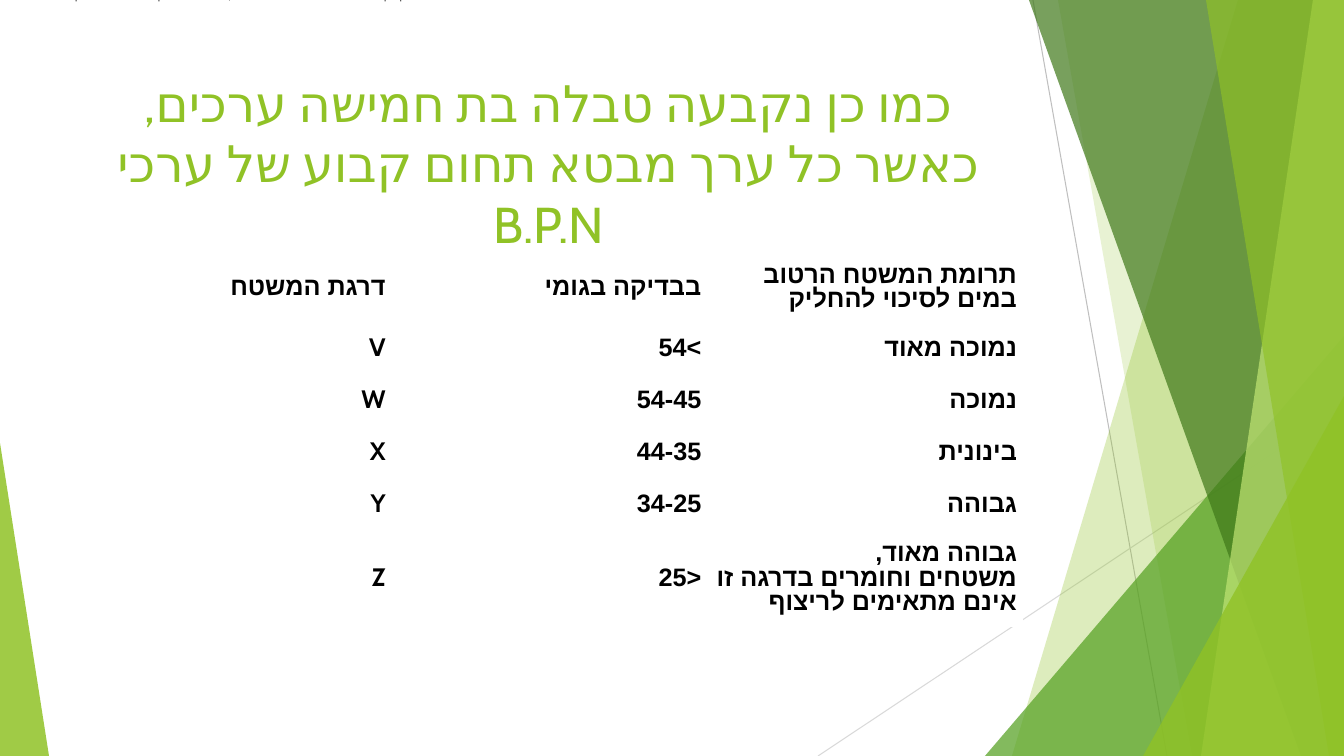
from lxml.etree import SubElement
from pptx import Presentation
from pptx.dml.color import RGBColor
from pptx.enum.shapes import MSO_CONNECTOR, MSO_SHAPE
from pptx.enum.text import MSO_ANCHOR as Anchor, PP_ALIGN as Align
from pptx.oxml.ns import qn
from pptx.util import Pt

PX = 9144000 / 1008  # EMU per px
GREEN = RGBColor(0x90, 0xC2, 0x26)
LEAF = RGBColor(0x54, 0xA0, 0x21)
FOREST = RGBColor(0x3F, 0x78, 0x19)
LIME = RGBColor(0xC0, 0xE4, 0x74)
GREY = RGBColor(0xBF, 0xBF, 0xBF)
PALE_GREY = RGBColor(0xD9, 0xD9, 0xD9)
DARK_GREY = RGBColor(0x4D, 0x4D, 0x4D)
BLACK = RGBColor(0, 0, 0)
WHITE = RGBColor(0xFF, 0xFF, 0xFF)

HEADING = "כמו כן נקבעה טבלה בת חמישה ערכים, כאשר כל ערך מבטא תחום קבוע של ערכי B.P.N"
ROWS = [
    ("דרגת המשטח", "בבדיקה בגומי", "תרומת המשטח הרטוב\nבמים לסיכוי להחליק"),
    ("V", ">54", "נמוכה מאוד"),
    ("W", "54-45", "נמוכה"),
    ("X", "44-35", "בינונית"),
    ("Y", "34-25", "גבוהה"),
    ("Z", "<25", "גבוהה מאוד,\nמשטחים וחומרים בדרגה זו\nאינם מתאימים לריצוף"),
]


def px(*lengths):
    return [round(length * PX) for length in lengths]


def write(frame, text, size, color, font="Cabin", hebrew_font="Cabin", bold=False,
          align=Align.RIGHT, rtl=True, anchor=Anchor.TOP, margins=(10, 5, 10, 5),
          spacing=None, wrap=True):
    frame.word_wrap = wrap
    frame.vertical_anchor = anchor
    (frame.margin_left, frame.margin_top,
     frame.margin_right, frame.margin_bottom) = px(*margins)
    para = frame.paragraphs[0]
    para.text = text
    para.alignment = align
    para.line_spacing = spacing
    if rtl:
        para._p.get_or_add_pPr().set("rtl", "1")
    for span in para.runs:
        span.font.size = Pt(size)
        span.font.name = font
        span.font.bold = bold
        span.font.color.rgb = color
        props = span._r.get_or_add_rPr()
        props.set("lang", "he-IL")
        SubElement(props, qn("a:cs")).set("typeface", hebrew_font)


deck = Presentation()
deck.slide_width, deck.slide_height = px(1344, 756)
page = deck.slides.add_slide(deck.slide_layouts[5])
shapes = page.shapes

# Thin crossing lines
for ends, color in [((1033, 0, 1167, 756), GREY), ((1344, 406, 818, 756), PALE_GREY)]:
    line = shapes.add_connector(MSO_CONNECTOR.STRAIGHT, *px(*ends))
    line.line.color.rgb = color
    line.line.width = Pt(0.75)
    SubElement(line._element.spPr, qn("a:effectLst"))

# Green facets: bands (top x, bottom x) reach the right edge, triangles are (box, apex)
FACETS = [
    ("band", (1238, 1012), GREEN, 30),
    ("band", (1058, 1192), GREEN, 20),
    ("triangle", ((985, 336, 359, 420), 1), LEAF, 72),
    ("band", (1029, 1301), FOREST, 70),
    ("band", (1313, 1201), LIME, 70),
    ("band", (1206, 1329), GREEN, 65),
    ("triangle", ((1143, 396, 201, 360), 1), GREEN, 80),
    ("triangle", ((0, 443, 49, 313), 0), GREEN, 85),
]
for kind, outline, color, opacity in FACETS:
    if kind == "band":
        top, bottom = outline
        builder = shapes.build_freeform(top, 0, scale=PX)
        builder.add_line_segments([(1344, 0), (1344, 756), (bottom, 756)], close=True)
        facet = builder.convert_to_shape()
    else:
        box, apex = outline
        facet = shapes.add_shape(MSO_SHAPE.ISOSCELES_TRIANGLE, *px(*box))
        facet.adjustments[0] = apex
    facet.shadow.inherit = False
    facet.line.fill.background()
    facet.fill.solid()
    facet.fill.fore_color.rgb = color
    tint = facet._element.spPr.find(qn("a:solidFill"))[0]
    SubElement(tint, qn("a:alpha")).set("val", str(opacity * 1000))

# Title
title = shapes.title
title.left, title.top, title.width, title.height = px(75, 67, 947, 146)
write(title.text_frame, HEADING, 36, GREEN, align=Align.CENTER)

# Table of slip grades
grid = shapes.add_table(len(ROWS), 3, *px(75, 253, 947, 374)).table
grid.first_row = grid.horz_banding = False
for row, height in zip(grid.rows, px(70, 52, 52, 52, 52, 96)):
    row.height = height
for row, texts in zip(grid.rows, ROWS):
    for cell, text in zip(row.cells, texts):
        cell.fill.solid()
        cell.fill.fore_color.rgb = WHITE
        write(cell.text_frame, text, 18, BLACK, hebrew_font="Arial", bold=True,
              spacing=0.87)
        cell.vertical_anchor = Anchor.MIDDLE
        (cell.margin_left, cell.margin_top,
         cell.margin_right, cell.margin_bottom) = px(5, 10, 5, 10)

# Small caption cut by the top edge
caption = shapes.add_textbox(*px(0, 0, 1344, 50))
write(caption.text_frame, HEADING, 9, DARK_GREY, font="Arial", hebrew_font="Arial",
      align=Align.LEFT, rtl=False, margins=(10, -13, 10, 0), wrap=False)

deck.save("out.pptx")
